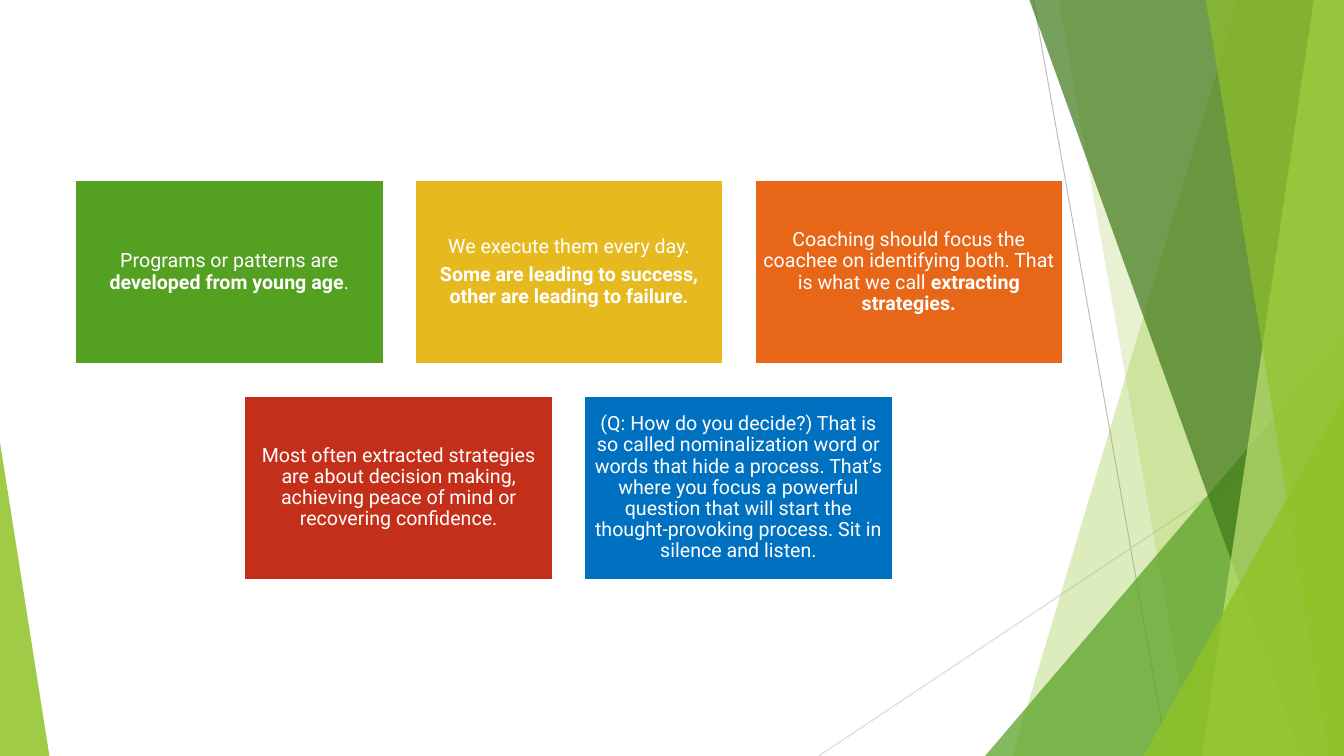
"""Build a slide of five coloured coaching cards on a green faceted background."""
from lxml import etree
from pptx import Presentation
from pptx.dml.color import RGBColor
from pptx.enum.shapes import MSO_CONNECTOR, MSO_SHAPE
from pptx.enum.text import MSO_ANCHOR, PP_ALIGN
from pptx.oxml.ns import qn
from pptx.util import Inches, Pt

STRAIGHT = MSO_CONNECTOR.STRAIGHT
TRIANGLE = MSO_SHAPE.ISOSCELES_TRIANGLE
RECTANGLE = MSO_SHAPE.RECTANGLE
MIDDLE = MSO_ANCHOR.MIDDLE
CENTER = PP_ALIGN.CENTER

COLORS = {
    "white": "FFFFFF", "gray": "BFBFBF", "light gray": "D9D9D9",
    "lime": "90C226", "pale lime": "C0E474", "green": "54A021",
    "dark green": "3F7819", "yellow": "E6B91E", "orange": "E76618",
    "red": "C42F1A", "blue": "0070C0",
}
SLIDE_WIDTH, SLIDE_HEIGHT = 13.33, 7.5
CARD_WIDTH, CARD_HEIGHT = 3.07, 1.84
CARD_PITCH = 3.37


def color(name):
    return RGBColor.from_string(COLORS[name])


presentation = Presentation()
presentation.slide_width = Inches(SLIDE_WIDTH)
presentation.slide_height = Inches(SLIDE_HEIGHT)
slide = presentation.slides.add_slide(presentation.slide_layouts[6])
shapes = slide.shapes

for start_x, start_y, end_x, line_color in [
    (10.25, 0, 11.58, "gray"),
    (SLIDE_WIDTH, 4.03, 8.12, "light gray"),
]:
    connector = shapes.add_connector(
        STRAIGHT, Inches(start_x), Inches(start_y), Inches(end_x), Inches(SLIDE_HEIGHT))
    connector.line.color.rgb = color(line_color)
    connector.line.width = Pt(0.75)
    etree.SubElement(connector._element.spPr, qn("a:effectLst"))

facets = [
    ("panel", (12.28, 10.04), "lime", 30),
    ("panel", (10.5, 11.83), "lime", 20),
    ("triangle", (9.77, 3.33, 3.56, 1), "green", 72),
    ("panel", (10.21, 12.91), "dark green", 70),
    ("panel", (13.03, 11.92), "pale lime", 70),
    ("panel", (11.96, 13.18), "lime", 65),
    ("triangle", (11.34, 3.93, 1.99, 1), "lime", 80),
    ("triangle", (0, 4.39, 0.49, 0), "lime", 85),
]
for kind, geometry, fill_color, opacity in facets:
    if kind == "panel":
        top_x, bottom_x = geometry
        builder = shapes.build_freeform(Inches(top_x), 0)
        builder.add_line_segments([
            (Inches(SLIDE_WIDTH), 0),
            (Inches(SLIDE_WIDTH), Inches(SLIDE_HEIGHT)),
            (Inches(bottom_x), Inches(SLIDE_HEIGHT)),
        ])
        facet = builder.convert_to_shape()
    else:
        left, top, width, apex = geometry
        facet = shapes.add_shape(
            TRIANGLE, Inches(left), Inches(top), Inches(width), Inches(SLIDE_HEIGHT - top))
        facet.adjustments[0] = apex
    facet.shadow.inherit = False
    facet.fill.solid()
    facet.fill.fore_color.rgb = color(fill_color)
    facet.line.fill.background()
    fill_element = facet._element.spPr.find(qn("a:solidFill"))
    etree.SubElement(fill_element[0], qn("a:alpha"), val=str(opacity * 1000))

card_rows = [
    (0.74, 1.78, [
        ("green", [[("Programs or patterns are ", False),
                    ("developed from young age", True), (".", False)]]),
        ("yellow", [[("We execute them every day.", False)],
                    [("Some are leading to success, other are leading to failure.", True)]]),
        ("orange", [[("Coaching should focus the coachee on identifying both. "
                      "That is what we call ", False),
                     ("extracting strategies.", True)]]),
    ]),
    (2.42, 3.92, [
        ("red", [[("Most often extracted strategies are about decision making, "
                   "achieving peace of mind or recovering confidence.", False)]]),
        ("blue", [[("(Q: How do you decide?) That is so called nominalization word or "
                    "words that hide a process. That’s where you focus a powerful "
                    "question that will start the thought-provoking process. "
                    "Sit in silence and listen.", False)]]),
    ]),
]
for row_left, row_top, cards in card_rows:
    for column, (fill_color, paragraphs) in enumerate(cards):
        card = shapes.add_shape(
            RECTANGLE, Inches(row_left + column * CARD_PITCH), Inches(row_top),
            Inches(CARD_WIDTH), Inches(CARD_HEIGHT))
        card.shadow.inherit = False
        card.fill.solid()
        card.fill.fore_color.rgb = color(fill_color)
        card.line.color.rgb = color("white")
        card.line.width = Pt(2)
        text_frame = card.text_frame
        text_frame.word_wrap = True
        text_frame.vertical_anchor = MIDDLE
        text_frame.margin_left = text_frame.margin_right = Inches(0.06)
        text_frame.margin_top = text_frame.margin_bottom = Inches(0.06)
        text_frame.text = "\n".join(
            "".join(text for text, bold in runs) for runs in paragraphs)
        for paragraph, runs in zip(text_frame.paragraphs, paragraphs):
            paragraph.alignment = CENTER
            paragraph.line_spacing = 0.9
            paragraph.space_after = Pt(5)
            paragraph.text = ""
            for text, bold in runs:
                run = paragraph.add_run()
                run.text = text
                run.font.name = "Roboto"
                run.font.size = Pt(14)
                run.font.bold = bold
                run.font.color.rgb = color("white")

presentation.save("out.pptx")
